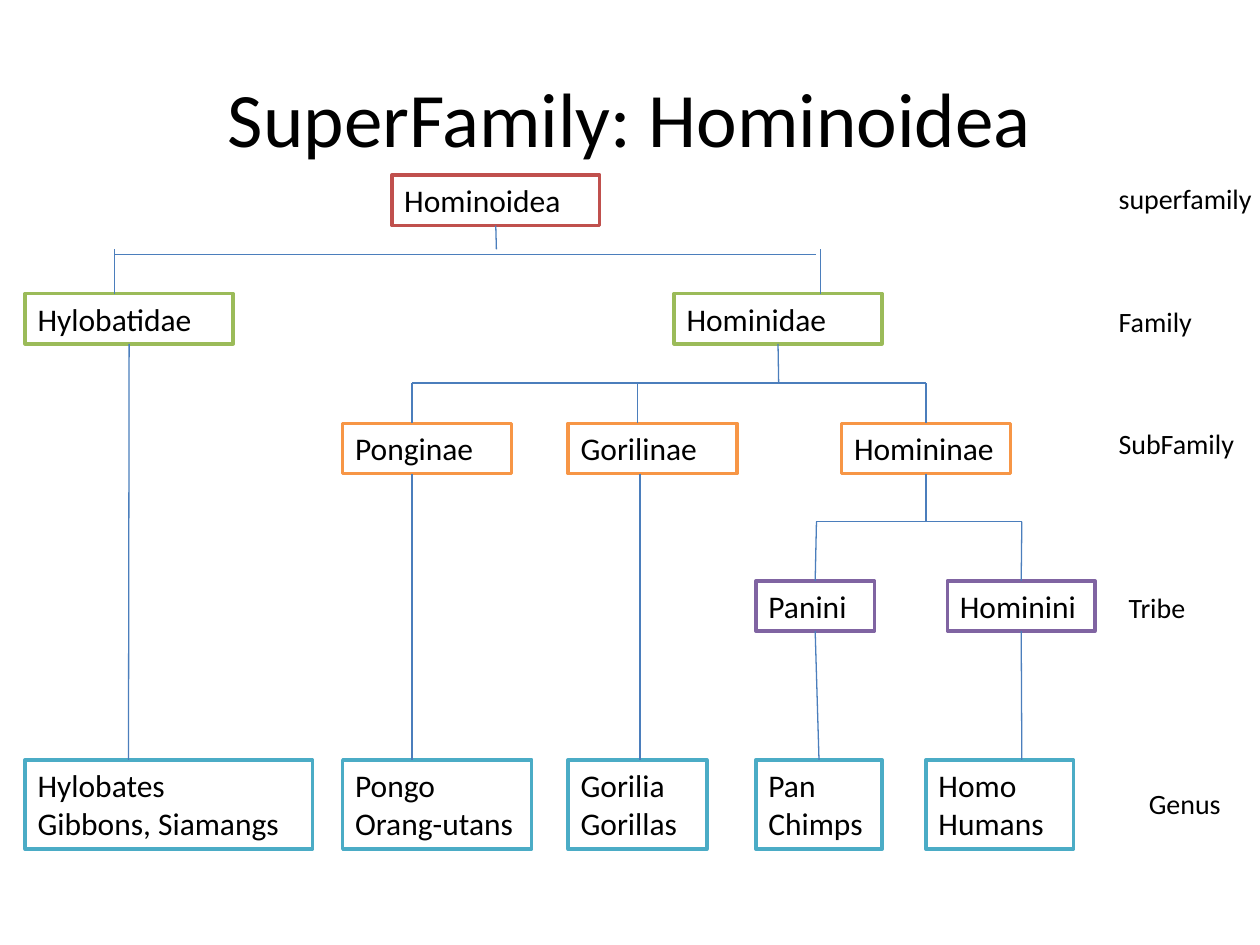
from pptx import Presentation
from pptx.dml.color import RGBColor
from pptx.enum.shapes import MSO_CONNECTOR as Connector, MSO_SHAPE as Shape
from pptx.enum.text import MSO_ANCHOR as Anchor, PP_ALIGN as Align
from pptx.oxml.ns import qn
from pptx.util import Inches, Pt
from lxml.etree import SubElement

COLORS = {
    "text": "000000", "fill": "FFFFFF", "link": "4B7EBC",
    "superfamily": "C0504D", "Family": "9BBB59", "SubFamily": "F79646",
    "Tribe": "8064A2", "Genus": "4BACC6",
}
TOP, BOTTOM = 0, 2
LINE_HEIGHT = {1: 0.4, 2: 0.71}

# rank: (top of its boxes, left and top of its label)
RANKS = {
    "superfamily": (1.39, 8.78, 1.39),
    "Family": (2.33, 8.78, 2.37),
    "SubFamily": (3.36, 8.78, 3.34),
    "Tribe": (4.61, 8.86, 4.64),
    "Genus": (6.03, 9.02, 6.19),
}

# rank: (left, width, lines of text) of each box
TAXA = {
    "superfamily": [(3.11, 1.65, ["Hominoidea"])],
    "Family": [(0.2, 1.65, ["Hylobatidae"]), (5.35, 1.65, ["Hominidae"])],
    "SubFamily": [(2.72, 1.34, ["Ponginae"]), (4.51, 1.34, ["Gorilinae"]),
                  (6.68, 1.34, ["Homininae"])],
    "Tribe": [(6, 0.94, ["Panini"]), (7.52, 1.17, ["Hominini"])],
    "Genus": [(0.2, 2.28, ["Hylobates", "Gibbons, Siamangs"]),
              (2.72, 1.5, ["Pongo", "Orang-utans"]),
              (4.51, 1.1, ["Gorilia", "Gorillas"]),
              (6, 1, ["Pan", "Chimps"]),
              (7.35, 1.17, ["Homo", "Humans"])],
}


def color(name):
    return RGBColor.from_string(COLORS[name])


def write(shape, lines, size, align=Align.LEFT, anchor=Anchor.TOP):
    frame = shape.text_frame
    frame.word_wrap = True
    frame.vertical_anchor = anchor
    frame.text = "\n".join(lines)
    for paragraph in frame.paragraphs:
        paragraph.alignment = align
        paragraph.font.name = "Calibri"
        paragraph.font.size = Pt(size)
        paragraph.font.color.rgb = color("text")


def add_text(slide, box, text, size, **layout):
    shape = slide.shapes.add_textbox(*map(Inches, box))
    write(shape, [text], size, **layout)


def add_taxon(slide, rank, left, width, lines):
    box = left, RANKS[rank][0], width, LINE_HEIGHT[len(lines)]
    shape = slide.shapes.add_shape(Shape.RECTANGLE, *map(Inches, box))
    shape.shadow.inherit = False
    shape.fill.solid()
    shape.fill.fore_color.rgb = color("fill")
    shape.line.color.rgb = color(rank)
    shape.line.width = Pt(2)
    write(shape, lines, 18)
    return shape


def add_link(slide, start, end):
    """Draw a line; each end is an (x, y) point or a (box, side) pair."""
    line = slide.shapes.add_connector(Connector.STRAIGHT, 0, 0, 0, 0)
    line.line.color.rgb = color("link")
    line.line.width = Pt(0.75)
    SubElement(line._element.spPr, qn("a:effectLst"))
    if isinstance(start[0], (int, float)):
        line.begin_x, line.begin_y = map(Inches, start)
    else:
        line.begin_connect(*start)
    if isinstance(end[0], (int, float)):
        line.end_x, line.end_y = map(Inches, end)
    else:
        line.end_connect(*end)


def add_links(slide, boxes):
    def top(name):
        return boxes[name], TOP

    def bottom(name):
        return boxes[name], BOTTOM

    family, subfamily, genus = (RANKS[rank][0] for rank in ("Family", "SubFamily", "Genus"))
    subfamily_end = subfamily + LINE_HEIGHT[1]
    links = [
        # superfamily to families
        (bottom("Hominoidea"), (3.94, 1.98)),
        ((0.91, 2.02), (6.48, 2.02)),
        ((0.91, 1.98), (0.91, family)),
        ((6.51, 1.98), (6.51, family)),
        # Hominidae to subfamilies
        (bottom("Hominidae"), (6.18, 3.04)),
        ((3.27, 3.04), (7.35, 3.04)),
        ((3.27, 3.04), (3.27, subfamily)),
        ((5.06, 3.04), (5.06, subfamily)),
        ((7.35, 3.04), top("Homininae")),
        # Homininae to tribes
        (bottom("Homininae"), (7.35, 4.14)),
        ((6.48, 4.14), (8.11, 4.14)),
        ((6.48, 4.14), top("Panini")),
        ((8.11, 4.14), top("Hominini")),
        # down to genera
        (bottom("Hylobatidae"), (1.02, genus)),
        ((3.27, subfamily_end), (3.27, genus)),
        ((5.08, subfamily_end), (5.08, genus)),
        (bottom("Panini"), top("Pan")),
        (bottom("Hominini"), (8.11, genus)),
    ]
    for start, end in links:
        add_link(slide, start, end)


def main():
    presentation = Presentation()
    presentation.slide_width, presentation.slide_height = Inches(10), Inches(7.5)
    slide = presentation.slides.add_slide(presentation.slide_layouts[6])

    add_text(slide, (0.5, 0.3, 9, 1.25), "SuperFamily: Hominoidea", 44,
             align=Align.CENTER, anchor=Anchor.MIDDLE)
    boxes = {}
    for rank, taxa in TAXA.items():
        for left, width, lines in taxa:
            boxes[lines[0]] = add_taxon(slide, rank, left, width, lines)
    add_links(slide, boxes)
    for rank, (_, left, top) in RANKS.items():
        add_text(slide, (left, top, 1.5, 0.37), rank, 16)

    presentation.save("out.pptx")


if __name__ == "__main__":
    main()
